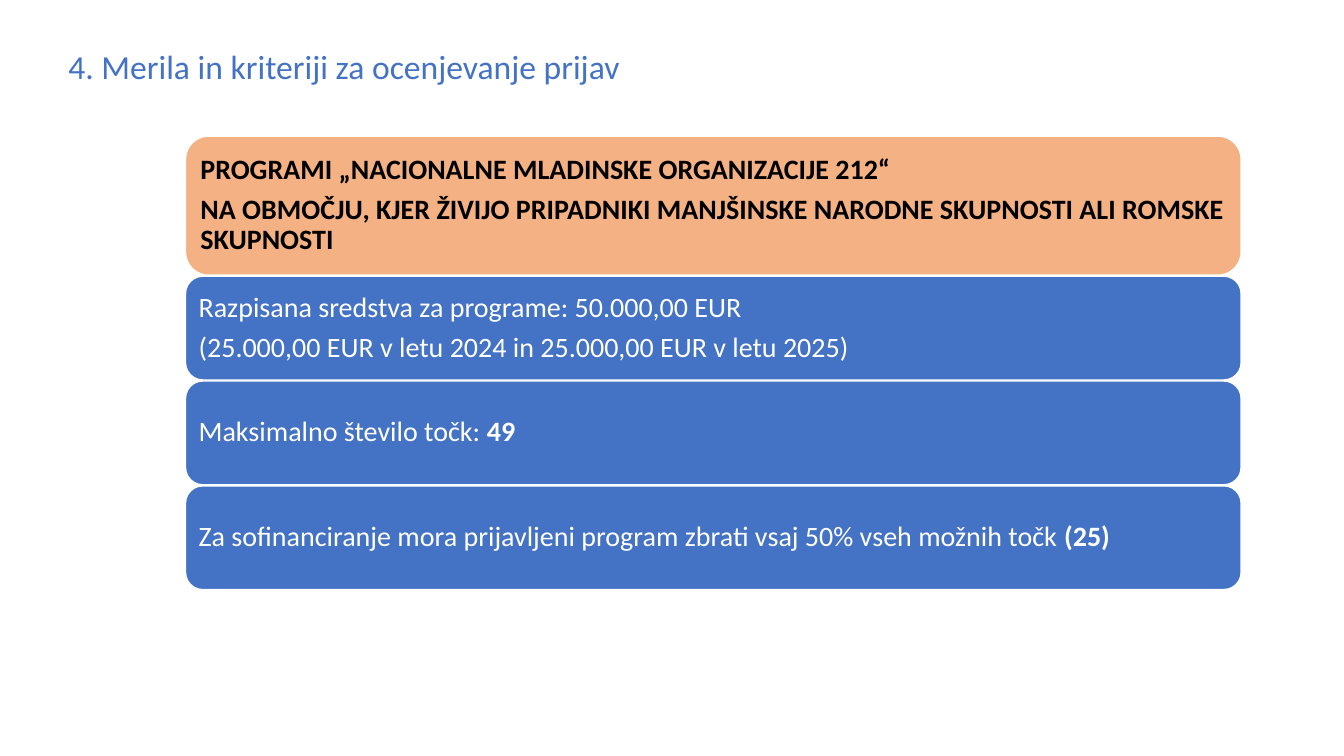
from pptx import Presentation
from pptx.dml.color import RGBColor
from pptx.enum.shapes import MSO_SHAPE as Shape
from pptx.enum.text import MSO_ANCHOR as Anchor, MSO_AUTO_SIZE as AutoSize, PP_ALIGN as Align
from pptx.util import Inches, Pt

BLUE, ORANGE, WHITE, BLACK = "4472C4", "F4B183", "FFFFFF", "000000"
GAP = 0.01

# Each bar: height, fill, text colour, paragraphs of (text, bold) spans
BARS = [
    (1.38, ORANGE, BLACK, [
        [("PROGRAMI „NACIONALNE MLADINSKE ORGANIZACIJE 212“", True)],
        [("NA OBMOČJU, KJER ŽIVIJO PRIPADNIKI MANJŠINSKE NARODNE SKUPNOSTI "
          "ALI ROMSKE SKUPNOSTI", True)],
    ]),
    (1.03, BLUE, WHITE, [
        [("Razpisana sredstva za programe: 50.000,00 EUR", False)],
        [("(25.000,00 EUR v letu 2024 in 25.000,00 EUR v letu 2025)", False)],
    ]),
    (1.03, BLUE, WHITE, [
        [("Maksimalno število točk: ", False), ("49", True)],
    ]),
    (1.03, BLUE, WHITE, [
        [("Za sofinanciranje mora prijavljeni program zbrati vsaj 50% vseh možnih točk ", False),
         ("(25)", True)],
    ]),
]


def color(value):
    return RGBColor.from_string(value)


def add_text(para, text, size=20, fill=BLACK, bold=False):
    span = para.add_run()
    span.text = text
    span.font.name = "Calibri"
    span.font.size = Pt(size)
    span.font.bold = bold
    span.font.color.rgb = color(fill)


def add_title(page, left, top, width, height, text):
    box = page.shapes.add_textbox(Inches(left), Inches(top), Inches(width), Inches(height))
    frame = box.text_frame
    frame.word_wrap = False
    frame.auto_size = AutoSize.SHAPE_TO_FIT_TEXT
    add_text(frame.paragraphs[0], text, size=24, fill=BLUE)


def add_bar(page, left, top, width, height, fill, ink, paragraphs):
    bar = page.shapes.add_shape(Shape.ROUNDED_RECTANGLE, Inches(left), Inches(top),
                                Inches(width), Inches(height))
    bar.shadow.inherit = False
    bar.fill.solid()
    bar.fill.fore_color.rgb = color(fill)
    bar.line.color.rgb = color(WHITE)
    bar.line.width = Pt(1)

    frame = bar.text_frame
    frame.word_wrap = True
    frame.vertical_anchor = Anchor.MIDDLE
    frame.margin_left = frame.margin_right = Inches(0.08)
    frame.margin_top = frame.margin_bottom = Inches(0.08)
    for index, spans in enumerate(paragraphs):
        para = frame.add_paragraph() if index else frame.paragraphs[0]
        para.alignment = Align.LEFT
        para.line_spacing = 0.9
        if index:
            para.space_before = Pt(7)
        for text, bold in spans:
            add_text(para, text, fill=ink, bold=bold)


def add_stack(page, left, top, width, bars):
    for height, fill, ink, paragraphs in bars:
        add_bar(page, left, top, width, height, fill, ink, paragraphs)
        top += height + GAP


def main():
    deck = Presentation()
    deck.slide_width, deck.slide_height = Inches(13.33), Inches(7.5)
    page = deck.slides.add_slide(deck.slide_layouts[6])
    add_title(page, 0.58, 0.41, 5.72, 0.5, "4. Merila in kriteriji za ocenjevanje prijav")
    add_stack(page, 1.84, 1.35, 10.47, BARS)
    deck.save("out.pptx")


if __name__ == "__main__":
    main()
